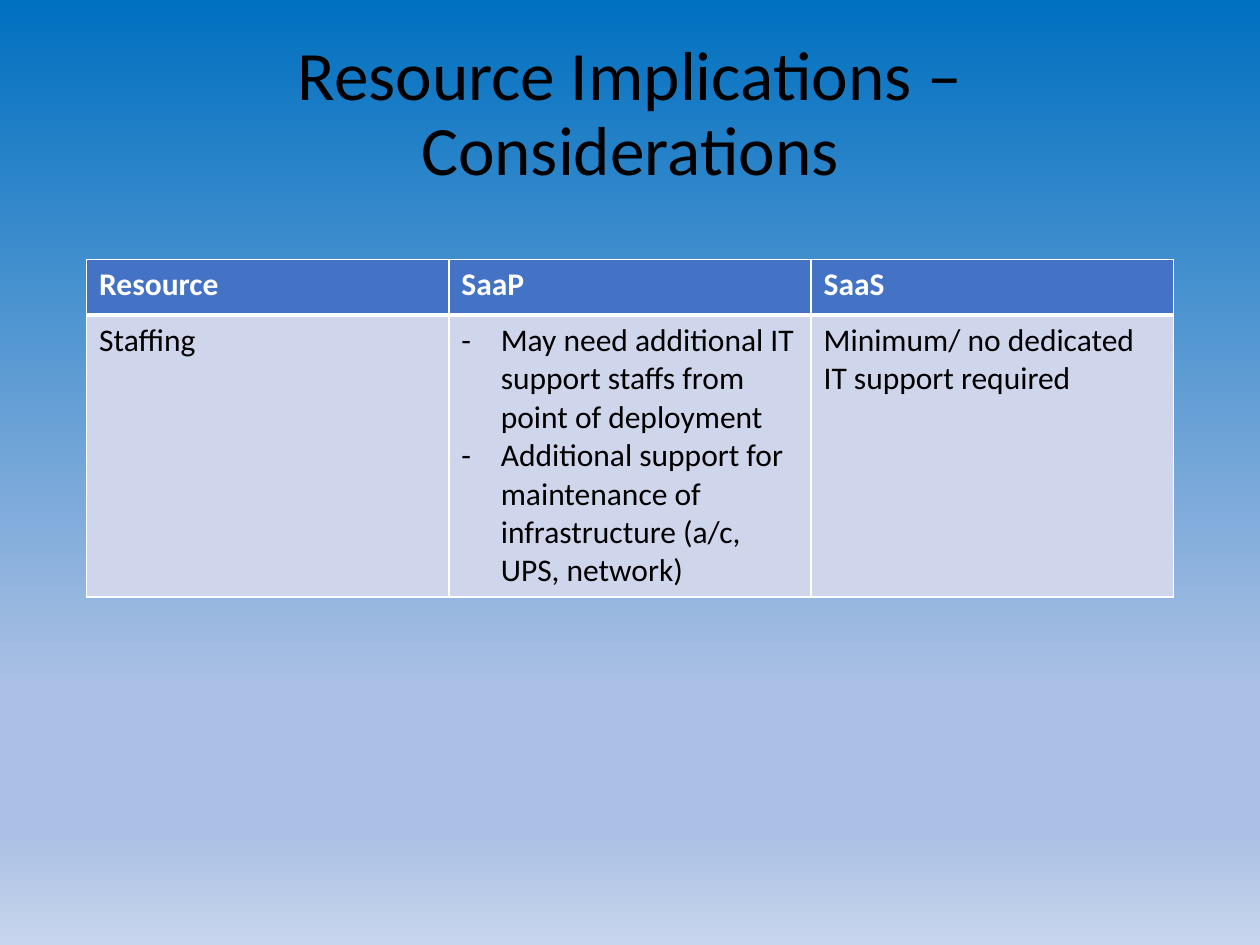
from dataclasses import dataclass

from lxml import etree
from pptx import Presentation
from pptx import util as u
from pptx.dml.color import RGBColor
from pptx.enum import text
from pptx.oxml.ns import qn

Pt = u.Pt
FONT = "Calibri"
BLACK = RGBColor(0x00, 0x00, 0x00)
WHITE = RGBColor(0xFF, 0xFF, 0xFF)
BLUE = RGBColor(0x44, 0x72, 0xC4)
PALE = RGBColor(0xCF, 0xD5, 0xEA)
DEEP = RGBColor(0x00, 0x70, 0xC0)
MIST = RGBColor(0xAB, 0xC0, 0xE4)
HAZE = RGBColor(0xC7, 0xD5, 0xED)
STOPS = [(0, DEEP), (73, MIST), (88, MIST), (100, HAZE)]

LEFT, WIDTH = 49.5, 621
INDENT = 22.5


@dataclass
class Look:
    """Style of one table row; edges are line widths in points."""
    height: float
    fill: RGBColor
    color: RGBColor
    bold: bool
    edges: dict[str, float]


@dataclass
class Entry:
    lines: list[str]
    dashed: bool = False


HEAD = Look(31.7, BLUE, WHITE, True, {"lnL": 1, "lnR": 1, "lnT": 1, "lnB": 3})
BODY = Look(158.4, PALE, BLACK, False, {"lnL": 1, "lnR": 1, "lnT": 3, "lnB": 1})
ROWS = [
    (HEAD, [Entry(["Resource"]), Entry(["SaaP"]), Entry(["SaaS"])]),
    (BODY, [
        Entry(["Staffing"]),
        Entry(["May need additional IT support staffs from point of deployment",
               "Additional support for maintenance of infrastructure (a/c, UPS, network)"],
              dashed=True),
        Entry(["Minimum/ no dedicated IT support required"]),
    ]),
]


def add_color(parent, color: RGBColor) -> None:
    etree.SubElement(parent, qn("a:srgbClr"), val=str(color))


def style(para, size: float, color: RGBColor, bold: bool = False) -> None:
    for run in para.runs:
        run.font.name, run.font.size = FONT, Pt(size)
        run.font.color.rgb, run.font.bold = color, bold


def paint(slide) -> None:
    """Fill the background from top to bottom."""
    fill = slide.background.fill
    fill.gradient()
    fill.gradient_angle = 270
    stops = next(slide.background._cSld.iter(qn("a:gsLst")))
    for stop in list(stops):
        stops.remove(stop)
    for place, color in STOPS:
        add_color(etree.SubElement(stops, qn("a:gs"), pos=str(place * 1000)), color)


def add_title(slide, words: str) -> None:
    title = slide.shapes.title
    title.left, title.top = Pt(LEFT), Pt(28.8)
    title.width, title.height = Pt(WIDTH), Pt(74.2)
    frame = title.text_frame
    frame.text = words
    frame.word_wrap = True
    frame.auto_size = text.MSO_AUTO_SIZE.NONE
    frame.vertical_anchor = text.MSO_ANCHOR.MIDDLE
    para = frame.paragraphs[0]
    para.alignment = text.PP_ALIGN.CENTER
    para.line_spacing = 0.9
    style(para, 39.6, BLACK)


def add_dash(para) -> None:
    props = para._p.get_or_add_pPr()
    props.set("marL", str(Pt(INDENT)))
    props.set("indent", str(-Pt(INDENT)))
    etree.SubElement(props, qn("a:buFont"), typeface=FONT)
    etree.SubElement(props, qn("a:buChar"), char="-")


def fill_cell(cell, entry: Entry, look: Look) -> None:
    # Borders come before the fill in the cell properties
    props = cell._tc.get_or_add_tcPr()
    for edge, width in look.edges.items():
        line = etree.SubElement(props, qn(f"a:{edge}"), w=str(Pt(width)))
        add_color(etree.SubElement(line, qn("a:solidFill")), WHITE)
    cell.fill.solid()
    cell.fill.fore_color.rgb = look.fill
    cell.text_frame.text = "\n".join(entry.lines)
    for para in cell.text_frame.paragraphs:
        style(para, 18, look.color, look.bold)
        if entry.dashed:
            add_dash(para)


def add_grid(slide) -> None:
    count = len(ROWS[0][1])
    height = sum(look.height for look, _ in ROWS)
    table = slide.shapes.add_table(len(ROWS), count, Pt(LEFT), Pt(148.3),
                                   Pt(WIDTH), Pt(height)).table
    table.horz_banding = False
    for row, (look, entries) in zip(table.rows, ROWS):
        row.height = Pt(look.height)
        for cell, entry in zip(row.cells, entries):
            fill_cell(cell, entry, look)


def main() -> None:
    deck = Presentation()
    deck.slide_width, deck.slide_height = Pt(720), Pt(540)
    slide = deck.slides.add_slide(deck.slide_layouts[5])
    paint(slide)
    add_title(slide, "Resource Implications – Considerations")
    add_grid(slide)
    deck.save("out.pptx")


if __name__ == "__main__":
    main()
